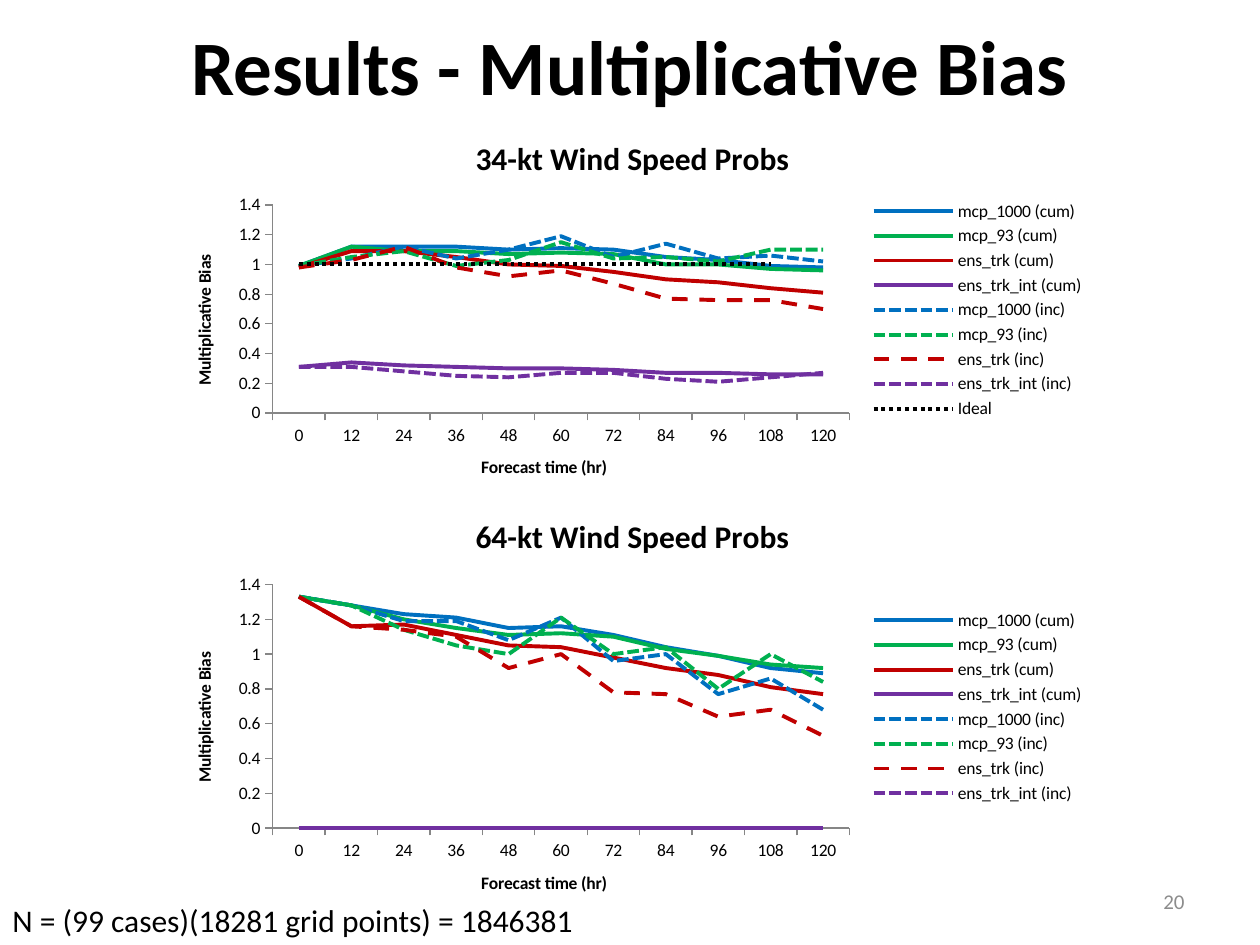
from pptx import Presentation
from pptx.chart.data import CategoryChartData
from pptx.dml.color import RGBColor
from pptx.enum.chart import XL_CHART_TYPE, XL_LEGEND_POSITION, XL_MARKER_STYLE, XL_TICK_MARK
from pptx.enum.dml import MSO_LINE
from pptx.enum.text import MSO_ANCHOR, PP_ALIGN
from pptx.util import Inches, Pt

BLACK = RGBColor(0x00, 0x00, 0x00)
GRAY = RGBColor(0x8C, 0x8C, 0x8C)
AXIS_GRAY = RGBColor(0x86, 0x86, 0x86)
BLUE = RGBColor(0x00, 0x70, 0xC0)
GREEN = RGBColor(0x00, 0xB0, 0x50)
RED = RGBColor(0xC0, 0x00, 0x00)
PURPLE = RGBColor(0x70, 0x30, 0xA0)

HOURS = [str(hour) for hour in range(0, 121, 12)]
SERIES_STYLES = [
    ("mcp_1000 (cum)", BLUE, None),
    ("mcp_93 (cum)", GREEN, None),
    ("ens_trk (cum)", RED, None),
    ("ens_trk_int (cum)", PURPLE, None),
    ("mcp_1000 (inc)", BLUE, MSO_LINE.SQUARE_DOT),
    ("mcp_93 (inc)", GREEN, MSO_LINE.SQUARE_DOT),
    ("ens_trk (inc)", RED, MSO_LINE.DASH),
    ("ens_trk_int (inc)", PURPLE, MSO_LINE.SQUARE_DOT),
    ("Ideal", BLACK, MSO_LINE.ROUND_DOT),
]
BIAS_34KT = [
    [0.99, 1.12, 1.12, 1.12, 1.1, 1.11, 1.1, 1.05, 1.03, 0.99, 0.98],
    [0.99, 1.12, 1.09, 1.09, 1.07, 1.08, 1.07, 1, 1, 0.97, 0.96],
    [0.98, 1.09, 1.09, 1.05, 1, 0.99, 0.95, 0.9, 0.88, 0.84, 0.81],
    [0.31, 0.34, 0.32, 0.31, 0.3, 0.3, 0.29, 0.27, 0.27, 0.26, 0.26],
    [0.99, 1.04, 1.12, 1.04, 1.1, 1.19, 1.05, 1.14, 1.04, 1.06, 1.02],
    [0.99, 1.05, 1.09, 0.99, 1.03, 1.15, 1.04, 1.05, 1.02, 1.1, 1.1],
    [0.98, 1.03, 1.12, 0.98, 0.92, 0.96, 0.87, 0.77, 0.76, 0.76, 0.7],
    [0.31, 0.31, 0.28, 0.25, 0.24, 0.27, 0.27, 0.23, 0.21, 0.24, 0.27],
    [1] * 10,
]
BIAS_64KT = [
    [1.33, 1.28, 1.23, 1.21, 1.15, 1.16, 1.11, 1.04, 0.99, 0.92, 0.89],
    [1.33, 1.28, 1.2, 1.15, 1.11, 1.12, 1.1, 1.03, 0.99, 0.94, 0.92],
    [1.33, 1.16, 1.17, 1.11, 1.05, 1.04, 0.98, 0.92, 0.88, 0.81, 0.77],
    [0] * 11,
    [1.33, 1.28, 1.19, 1.19, 1.08, 1.21, 0.96, 1, 0.77, 0.86, 0.68],
    [1.33, 1.28, 1.14, 1.05, 1, 1.21, 1, 1.04, 0.8, 1, 0.84],
    [1.33, 1.16, 1.14, 1.1, 0.92, 1, 0.78, 0.77, 0.64, 0.68, 0.53],
    [0] * 11,
]


def write(frame, text, size, color=BLACK, bold=False, align=None):
    """Put one formatted line of text into a text frame."""
    paragraph = frame.paragraphs[0]
    paragraph.alignment = align
    run = paragraph.add_run()
    run.text = text
    run.font.name = "Calibri"
    run.font.size = Pt(size)
    run.font.bold = bold
    run.font.color.rgb = color


prs = Presentation()
prs.slide_width, prs.slide_height = Inches(10), Inches(7.5)
slide = prs.slides.add_slide(prs.slide_layouts[5])

# Title
title = slide.shapes.title
title.left, title.top = Inches(0.5), Inches(0)
title.width, title.height = Inches(9), Inches(1.03)
title.text_frame.vertical_anchor = MSO_ANCHOR.MIDDLE
write(title.text_frame, "Results - Multiplicative Bias", 44, bold=True, align=PP_ALIGN.CENTER)

# Slide number
number = slide.shapes.add_textbox(Inches(7.17), Inches(6.95), Inches(2.33), Inches(0.4))
number.text_frame.word_wrap = True
number.text_frame.vertical_anchor = MSO_ANCHOR.MIDDLE
write(number.text_frame, "20", 12, color=GRAY, align=PP_ALIGN.RIGHT)

# Sample size
sample_size = slide.shapes.add_textbox(Inches(0), Inches(7.1), Inches(4.71), Inches(0.4))
sample_size.text_frame.word_wrap = False
write(sample_size.text_frame, "N = (99 cases)(18281 grid points) = 1846381", 18)

# Bias charts, one for each wind speed
for heading, top, height, biases in [
    ("34-kt Wind Speed Probs", 0.92, 3.08, BIAS_34KT),
    ("64-kt Wind Speed Probs", 3.92, 3.38, BIAS_64KT),
]:
    bias_data = CategoryChartData()
    bias_data.categories = HOURS
    for (name, _, _), values in zip(SERIES_STYLES, biases):
        bias_data.add_series(name, values)
    chart = slide.shapes.add_chart(
        XL_CHART_TYPE.LINE, Inches(1.33), Inches(top), Inches(7.38), Inches(height), bias_data
    ).chart
    chart.font.name = "Calibri"
    chart.font.size = Pt(10)
    chart.font.color.rgb = BLACK
    write(chart.chart_title.text_frame, heading, 18, bold=True)
    chart.chart_title.include_in_layout = False

    chart.has_legend = True
    chart.legend.position = XL_LEGEND_POSITION.RIGHT
    chart.legend.include_in_layout = False

    # Axes
    for axis, label in [
        (chart.category_axis, "Forecast time (hr)"),
        (chart.value_axis, "Multiplicative Bias"),
    ]:
        write(axis.axis_title.text_frame, label, 10, bold=True)
        axis.has_major_gridlines = False
        axis.major_tick_mark = XL_TICK_MARK.OUTSIDE
        axis.format.line.color.rgb = AXIS_GRAY
    chart.value_axis.minimum_scale = 0
    chart.value_axis.maximum_scale = 1.4
    chart.value_axis.major_unit = 0.2

    # Lines
    chart.plots[0].vary_by_categories = False
    for series, (_, color, dash) in zip(chart.plots[0].series, SERIES_STYLES):
        series.smooth = False
        series.marker.style = XL_MARKER_STYLE.NONE
        series.format.line.color.rgb = color
        series.format.line.width = Pt(2.25)
        if dash:
            series.format.line.dash_style = dash

prs.save("out.pptx")
